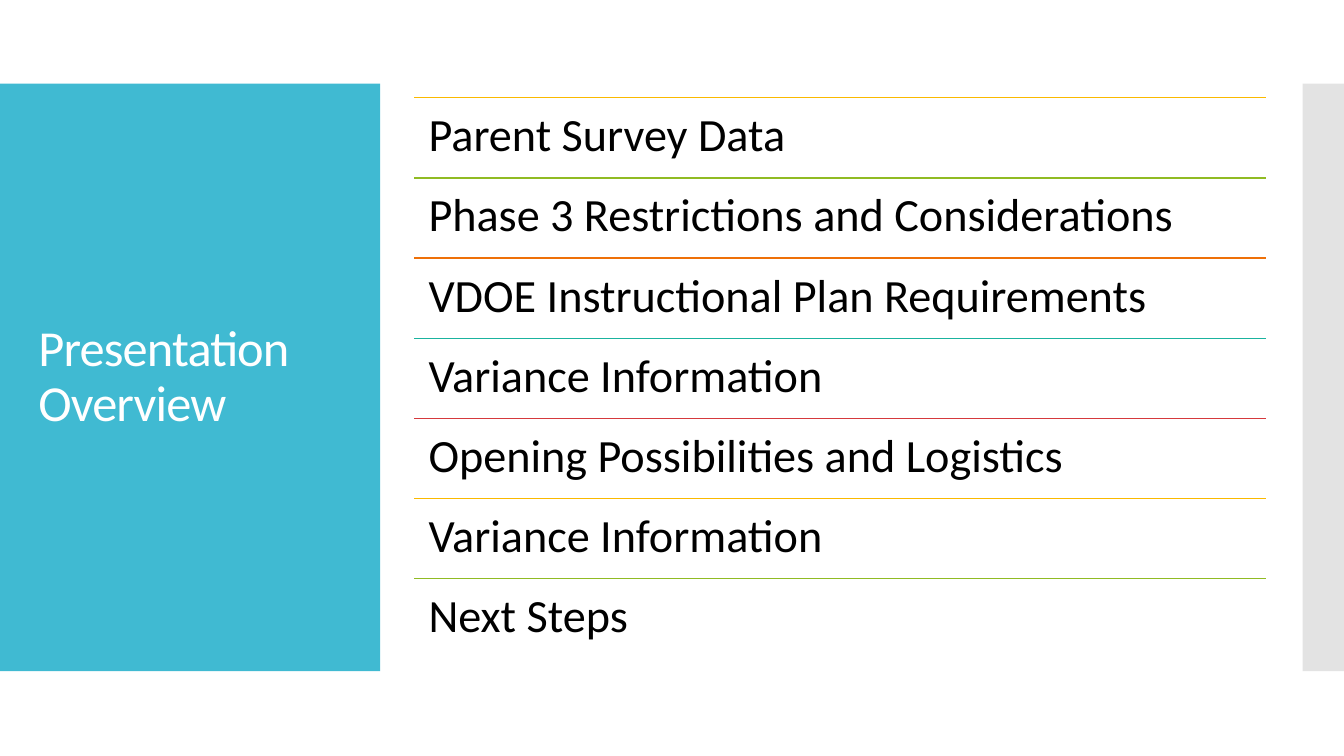
"""Build the Presentation Overview slide: a title panel beside ruled agenda rows."""
from lxml.etree import SubElement
from pptx import Presentation
from pptx.dml.color import RGBColor
from pptx.enum.shapes import MSO_CONNECTOR as Connector, MSO_SHAPE as Shape
from pptx.enum.text import MSO_ANCHOR as Anchor, MSO_AUTO_SIZE as AutoSize, PP_ALIGN as Align
from pptx.oxml.ns import qn
from pptx.util import Inches, Pt

COLORS = {
    "panel": "40BAD2", "strip": "C8C8C8", "title": "FFFFFF", "text": "000000",
    "gold": "FAB900", "green": "90BB23", "orange": "EE7008", "teal": "1AB39F", "red": "D5393D",
}
AGENDA = [
    ("Parent Survey Data", "gold"),
    ("Phase 3 Restrictions and Considerations", "green"),
    ("VDOE Instructional Plan Requirements", "orange"),
    ("Variance Information", "teal"),
    ("Opening Possibilities and Logistics", "red"),
    ("Variance Information", "gold"),
    ("Next Steps", "green"),
]
ROW_LEFT, ROW_TOP, ROW_WIDTH, ROW_HEIGHT = 4.11, 0.97, 8.45, 0.795


def write_text(box, text, size, color, anchor=Anchor.TOP, inset=None):
    frame = box.text_frame
    frame.word_wrap = True
    frame.auto_size = AutoSize.NONE
    frame.vertical_anchor = anchor
    if inset is not None:
        frame.margin_left = frame.margin_right = Inches(inset)
        frame.margin_top = frame.margin_bottom = Inches(inset)
    para = frame.paragraphs[0]
    para.alignment = Align.LEFT
    para.line_spacing = 0.9
    span = para.add_run()
    span.text = text
    span.font.name = "Calibri"
    span.font.size = Pt(size)
    span.font.color.rgb = RGBColor.from_string(COLORS[color])


deck = Presentation()
deck.slide_width, deck.slide_height = Inches(13.33), Inches(7.5)
page = deck.slides.add_slide(deck.slide_layouts[5])

for left, width, color in [(0, 3.77, "panel"), (12.92, 0.41, "strip")]:
    block = page.shapes.add_shape(
        Shape.RECTANGLE, Inches(left), Inches(0.83), Inches(width), Inches(5.83))
    block.shadow.inherit = False
    block.fill.solid()
    block.fill.fore_color.rgb = RGBColor.from_string(COLORS[color])
    block.line.fill.background()
    if color == "strip":
        SubElement(next(block.element.iter(qn("a:srgbClr"))), qn("a:alpha"), val="50000")

title = page.shapes.title
title.left, title.top, title.width, title.height = map(Inches, (0.28, 1.23, 3.22, 5.03))
write_text(title, "Presentation Overview", size=36, color="title", anchor=Anchor.MIDDLE)
next(title.element.iter(qn("a:rPr"))).set("spc", "-60")
block.element.addnext(title.element)

for index, (topic, color) in enumerate(AGENDA):
    left, width = Inches(ROW_LEFT), Inches(ROW_WIDTH)
    top = Inches(ROW_TOP + index * ROW_HEIGHT)
    rule = page.shapes.add_connector(Connector.STRAIGHT, left, top, left + width, top)
    rule.line.color.rgb = RGBColor.from_string(COLORS[color])
    rule.line.width = Pt(0.85)
    SubElement(rule.element.spPr, qn("a:effectLst"))
    row = page.shapes.add_textbox(left, top, width, Inches(ROW_HEIGHT))
    write_text(row, topic, size=33, color="text", inset=0.14)

deck.save("out.pptx")
